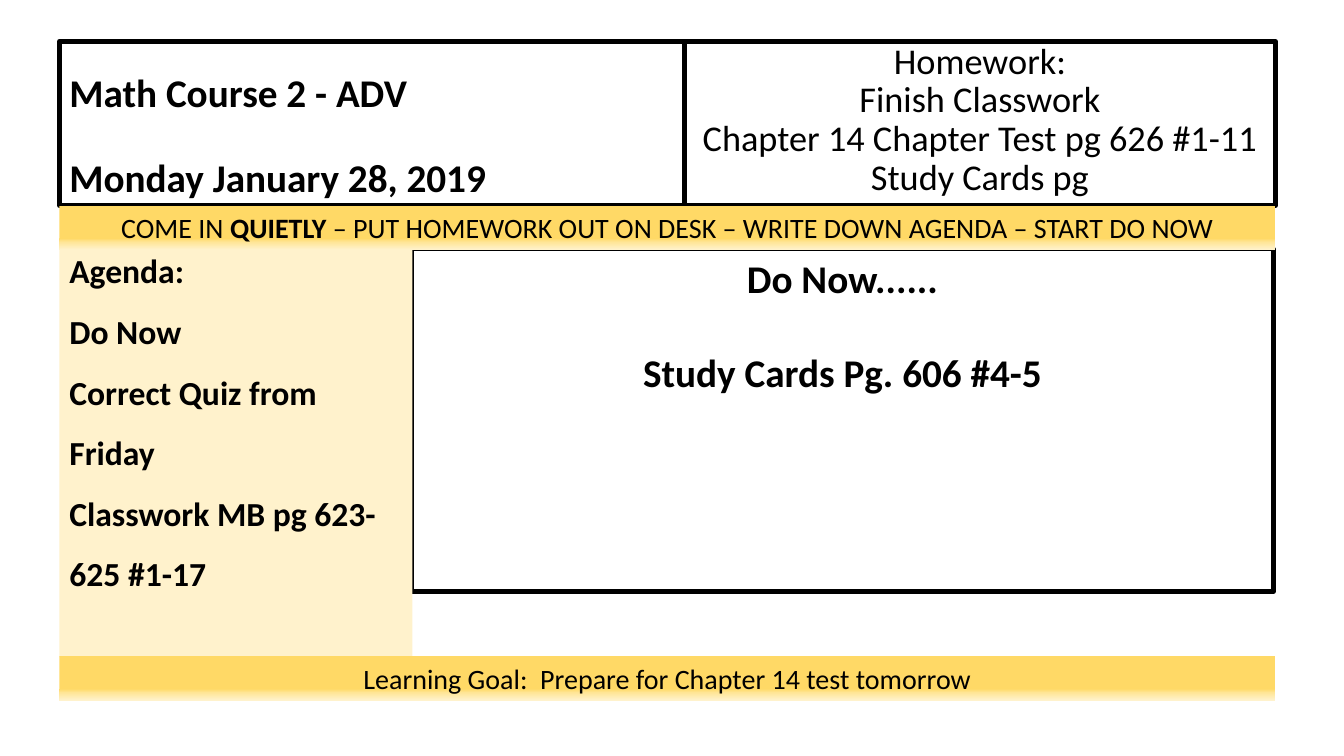
from dataclasses import dataclass

from lxml import etree
from pptx import Presentation
from pptx.dml.color import RGBColor
from pptx.enum.shapes import MSO_SHAPE
from pptx.enum.text import MSO_ANCHOR, PP_ALIGN
from pptx.oxml.ns import qn
from pptx.util import Inches, Pt

RECT = MSO_SHAPE.RECTANGLE
TOP, BOTTOM = MSO_ANCHOR.TOP, MSO_ANCHOR.BOTTOM
LEFT, CENTER = PP_ALIGN.LEFT, PP_ALIGN.CENTER


@dataclass(frozen=True)
class Theme:
    font: str = "Calibri"
    ink: str = "000000"
    cream: str = "FFF2CC"
    # Gradient stops: percent and colour
    band: tuple = ((0, "FFD966"), (74, "FFD966"), (83, "FFE699"), (100, "FFF2CC"))
    head: float = 28
    task: float = 25.9
    list: float = 24
    note: float = 20
    rule: float = 3.25


THEME = Theme()


def add_box(slide, box, anchor=TOP):
    """Add a plain rectangle with no fill or line."""
    shape = slide.shapes.add_shape(RECT, *(Inches(v) for v in box))
    shape.shadow.inherit = False
    shape.fill.background()
    shape.line.fill.background()
    shape.text_frame.word_wrap = True
    shape.text_frame.vertical_anchor = anchor
    return shape


def outline(shape):
    shape.line.color.rgb = RGBColor.from_string(THEME.ink)
    shape.line.width = Pt(THEME.rule)


def shade(shape):
    """Fill from top to bottom with the band's stops."""
    shape.fill.gradient()
    shape.fill.gradient_angle = 270
    stops = shape._element.spPr.find(qn("a:gradFill")).find(qn("a:gsLst"))
    for stop in list(stops):
        stops.remove(stop)
    for place, color in THEME.band:
        stop = etree.SubElement(stops, qn("a:gs"), pos=str(place * 1000))
        etree.SubElement(stop, qn("a:srgbClr"), val=color)


def write(shape, lines, size, align=LEFT, bold=False, pitch=1.0, first=None, gap=0):
    """Write one paragraph per line; a line is a list of (text, bold) or a string."""
    frame = shape.text_frame
    for i, line in enumerate(lines):
        para = frame.paragraphs[0] if i == 0 else frame.add_paragraph()
        para.alignment = align
        para.line_spacing = first if first and i == 0 else pitch
        para.space_before = Pt(gap if i else 0)
        para.font.name = THEME.font
        para.font.size = Pt(size)
        para.font.bold = bold
        para.font.color.rgb = RGBColor.from_string(THEME.ink)
        parts = [(line, None)] if isinstance(line, str) else line
        for text, strong in parts:
            run = para.add_run()
            run.text = text
            if strong:
                run.font.bold = True


def add_head(slide, box, split, course, work):
    """Course and date at left, homework at right."""
    x, y, w, h = box
    left = add_box(slide, (x, y, split, h), BOTTOM)
    outline(left)
    write(left, course, THEME.head, bold=True, pitch=0.9, gap=30.5)
    right = add_box(slide, (x + split, y, w - split, h))
    outline(right)
    write(right, work, THEME.task, CENTER, pitch=0.9, first=0.8)


def add_start(slide, box, lines):
    """Framed task for the start of class."""
    shape = add_box(slide, box)
    outline(shape)
    write(shape, lines, THEME.head, CENTER, bold=True, gap=34)


def add_band(slide, box, line):
    """Shaded strip with one centred line."""
    shape = add_box(slide, box)
    shade(shape)
    write(shape, [line], THEME.note, CENTER)


def add_agenda(slide, box, lines):
    """Cream column with the plan of the day."""
    shape = add_box(slide, box)
    shape.fill.solid()
    shape.fill.fore_color.rgb = RGBColor.from_string(THEME.cream)
    write(shape, lines, THEME.list, bold=True, pitch=1.5, first=0.9)


def main():
    deck = Presentation()
    deck.slide_width, deck.slide_height = Inches(13.33), Inches(7.5)
    slide = deck.slides.add_slide(deck.slide_layouts[6])
    x, wide, strip = 0.59, 12.06, 0.44

    add_head(
        slide, (x, 0.41, wide, 1.63), 6.2,
        ["Math Course 2 - ADV", "Monday January 28, 2019"],
        ["Homework:", "Finish Classwork",
         "Chapter 14 Chapter Test pg 626 #1-11", "Study Cards pg"],
    )
    add_start(slide, (4.08, 2.47, 8.55, 3.4),
              ["Do Now......", "Study Cards Pg. 606 #4-5"])
    add_band(slide, (x, 2.04, wide, strip), [
        ("COME IN ", False), ("QUIETLY", True),
        (" – PUT HOMEWORK OUT ON DESK – WRITE DOWN AGENDA – START DO NOW", False),
    ])
    add_agenda(slide, (x, 2.48, 3.5, 4.04),
               ["Agenda:", "Do Now", "Correct Quiz from Friday",
                "Classwork MB pg 623-625 #1-17"])
    add_band(slide, (x, 6.51, wide, strip),
             "Learning Goal:  Prepare for Chapter 14 test tomorrow")
    deck.save("out.pptx")


if __name__ == "__main__":
    main()
